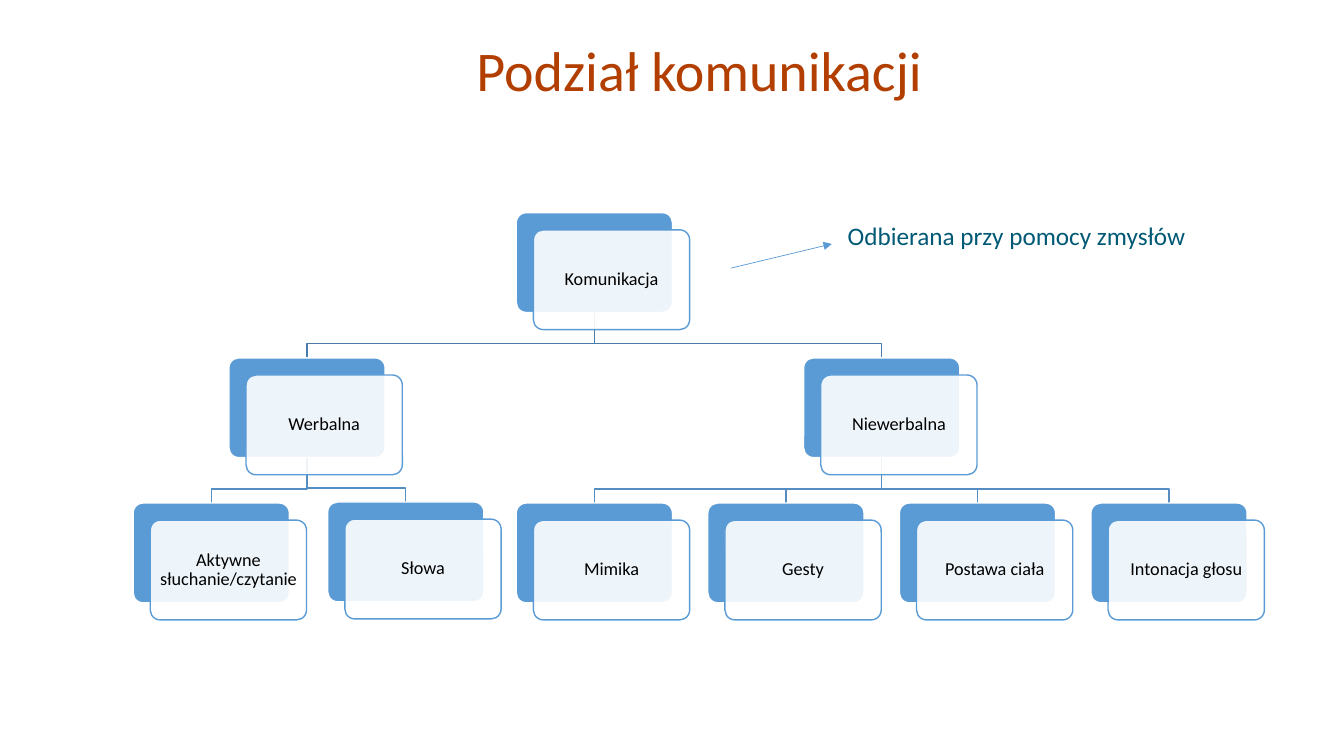
from lxml.etree import SubElement
from pptx import Presentation
from pptx.dml.color import RGBColor
from pptx.enum.shapes import MSO_CONNECTOR, MSO_SHAPE
from pptx.enum.text import MSO_ANCHOR, PP_ALIGN
from pptx.oxml.ns import qn
from pptx.util import Inches, Pt

FONT = "Calibri"
COLORS = {
    "title": "B23E00",
    "note": "015976",
    "text": "000000",
    "white": "FFFFFF",
    "blue": "5B9BD5",
    "upper_branch": "497CAB",
    "lower_branch": "538DC1",
}

CARD_WIDTH, CARD_HEIGHT = 1.55, 0.99
COLUMN_STEP, LEVEL_STEP = 1.9, 1.44
FRONT_OFFSET = 0.17

# Name: (column, level, parent)
TREE = {
    "Komunikacja": (2, 0, None),
    "Werbalna": (0.5, 1, "Komunikacja"),
    "Aktywne słuchanie/czytanie": (0, 2, "Werbalna"),
    "Słowa": (1, 2, "Werbalna"),
    "Niewerbalna": (3.5, 1, "Komunikacja"),
    "Mimika": (2, 2, "Niewerbalna"),
    "Gesty": (3, 2, "Niewerbalna"),
    "Postawa ciała": (4, 2, "Niewerbalna"),
    "Intonacja głosu": (5, 2, "Niewerbalna"),
}
NUDGES = {"Słowa": (0.03, -0.01)}


def color(name):
    return RGBColor.from_string(COLORS[name])


def write(frame, text, size, color_name, align=PP_ALIGN.LEFT, spacing=1.0):
    frame.word_wrap = True
    para = frame.paragraphs[0]
    para.alignment = align
    para.line_spacing = spacing
    span = para.add_run()
    span.text = text
    span.font.name = FONT
    span.font.size = Pt(size)
    span.font.color.rgb = color(color_name)


def add_title(page, left, top, width, height):
    title = page.shapes.title
    title.left, title.top = Inches(left), Inches(top)
    title.width, title.height = Inches(width), Inches(height)
    title.text_frame.vertical_anchor = MSO_ANCHOR.MIDDLE
    write(title.text_frame, "Podział komunikacji", 40, "title", PP_ALIGN.CENTER, 0.9)


def card_corner(name, left, top):
    column, level, _ = TREE[name]
    nudge_x, nudge_y = NUDGES.get(name, (0, 0))
    return left + column * COLUMN_STEP + nudge_x, top + level * LEVEL_STEP + nudge_y


def add_branch(page, parent, child, line_color):
    """Draw an elbow from the parent card's bottom to the child card's top."""
    start_x, start_y = parent[0] + CARD_WIDTH / 2, parent[1] + CARD_HEIGHT
    end_x, end_y = child[0] + CARD_WIDTH / 2, child[1]
    bend_y = end_y - 0.14
    builder = page.shapes.build_freeform(Inches(start_x), Inches(start_y))
    corners = [(start_x, bend_y), (end_x, bend_y), (end_x, end_y)]
    builder.add_line_segments([(Inches(x), Inches(y)) for x, y in corners], close=False)
    branch = builder.convert_to_shape()
    branch.shadow.inherit = False
    branch.fill.background()
    branch.line.color.rgb = color(line_color)
    branch.line.width = Pt(1)


def add_panel(page, left, top, fill, line):
    panel = page.shapes.add_shape(
        MSO_SHAPE.ROUNDED_RECTANGLE,
        Inches(left), Inches(top), Inches(CARD_WIDTH), Inches(CARD_HEIGHT))
    panel.adjustments[0] = 0.1
    panel.shadow.inherit = False
    panel.fill.solid()
    panel.fill.fore_color.rgb = color(fill)
    panel.line.color.rgb = color(line)
    panel.line.width = Pt(1)
    return panel


def add_card(page, name, left, top):
    add_panel(page, left, top, "blue", "white")
    front = add_panel(page, left + FRONT_OFFSET, top + FRONT_OFFSET, "white", "blue")
    fill = front.fill._xPr.find(qn("a:solidFill"))
    SubElement(fill[0], qn("a:alpha"), val="90000")
    frame = front.text_frame
    frame.margin_left = frame.margin_right = Inches(0.03)
    frame.margin_top = frame.margin_bottom = Inches(0.05)
    frame.vertical_anchor = MSO_ANCHOR.MIDDLE
    write(frame, name, 13, "text", PP_ALIGN.CENTER, 0.9)


def add_tree(page, left, top):
    corners = {name: card_corner(name, left, top) for name in TREE}
    for name, (_, level, parent) in TREE.items():
        if parent:
            line_color = "upper_branch" if level == 1 else "lower_branch"
            add_branch(page, corners[parent], corners[name], line_color)
    for name, corner in corners.items():
        add_card(page, name, *corner)


def add_note(page, left, top, width, height):
    """Add the remark and the arrow that leads to it from the root card."""
    box = page.shapes.add_textbox(
        Inches(left), Inches(top), Inches(width), Inches(height))
    write(box.text_frame, "Odbierana przy pomocy zmysłów", 18, "note")
    arrow = page.shapes.add_connector(
        MSO_CONNECTOR.STRAIGHT,
        Inches(left - 1.06), Inches(top + 0.52),
        Inches(left - 0.06), Inches(top + 0.28))
    arrow.line.color.rgb = color("blue")
    arrow.line.width = Pt(0.5)
    SubElement(arrow.line._get_or_add_ln(), qn("a:tailEnd"), type="triangle")
    SubElement(arrow._element.spPr, qn("a:effectLst"))


def main():
    deck = Presentation()
    deck.slide_width, deck.slide_height = Inches(13.33), Inches(7.5)
    page = deck.slides.add_slide(deck.slide_layouts[5])
    page.background.fill.solid()
    page.background.fill.fore_color.rgb = color("white")
    add_title(page, 1.58, 0, 10.71, 1.45)
    add_tree(page, 1.32, 2.11)
    add_note(page, 8.31, 2.14, 3.57, 0.4)
    deck.save("out.pptx")


if __name__ == "__main__":
    main()
